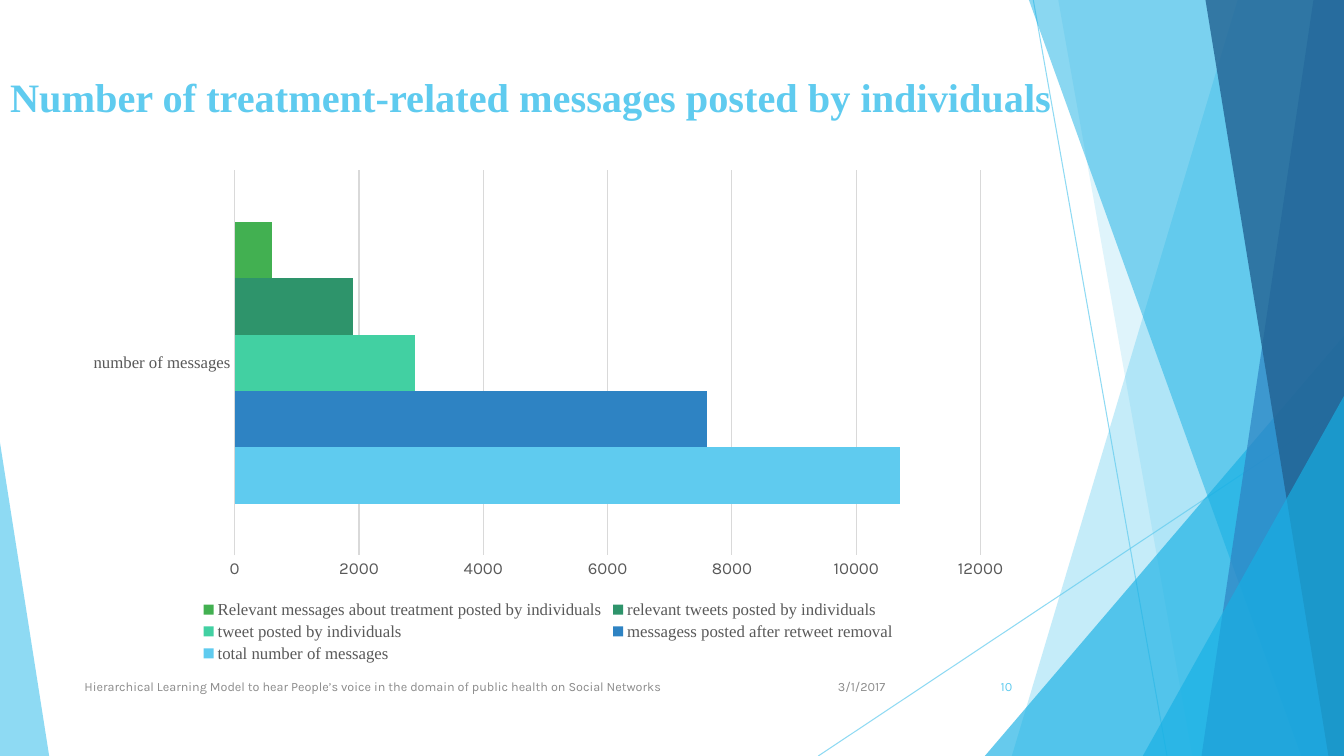
from lxml import etree
from pptx import Presentation
from pptx import util as u
from pptx.chart.data import CategoryChartData
from pptx.dml.color import RGBColor
from pptx.enum import chart as ch, shapes, text
from pptx.oxml.ns import qn

COLORS = {
    "sky": "5FCBEF", "cyan": "17B0E4", "blue": "2E83C3", "navy": "226292",
    "mint": "42D0A2", "teal": "2E946B", "green": "42B051",
    "axis": "595959", "grid": "D9D9D9", "footer": "8C8C8C",
}
SERIF, SANS = "Times New Roman", "Karla"
W, H = 33.87, 19.05

# Facets in stacking order: (kind, top x or apex y, bottom x, colour, opacity %)
FACETS = [
    ("quad", 31.19, 25.5, "sky", 36),
    ("quad", 26.67, 30.05, "sky", 20),
    ("triangle", 8.46, 24.82, "cyan", 66),
    ("quad", 25.93, 32.79, "cyan", 50),
    ("quad", 33.1, 30.28, "blue", 70),
    ("quad", 30.38, 33.48, "navy", 80),
    ("triangle", 9.98, 28.8, "cyan", 66),
]
RAYS = [(26.04, 0, 29.41, H), (W, 10.24, 20.62, H)]
SERIES = [
    ("total number of messages", 10700, "sky"),
    ("messagess posted after retweet removal", 7600, "blue"),
    ("tweet posted by individuals", 2900, "mint"),
    ("relevant tweets posted by individuals", 1900, "teal"),
    ("Relevant messages about treatment posted by individuals", 600, "green"),
]


def rgb(name):
    return RGBColor.from_string(COLORS[name])


def style_font(font, name, size, color, bold=False):
    font.name, font.size, font.bold = name, u.Pt(size), bold
    font.color.rgb = rgb(color)


def set_alpha(fill_owner, percent):
    """Make the solid colour inside a shape's fill or line translucent."""
    color = next(fill_owner.iter(qn("a:srgbClr")))
    etree.SubElement(color, qn("a:alpha")).set("val", str(percent * 1000))


def paint(sp, color, opacity):
    sp.shadow.inherit = False
    sp.fill.solid()
    sp.fill.fore_color.rgb = rgb(color)
    sp.line.fill.background()
    set_alpha(sp.element.spPr, opacity)


def add_triangle(slide, box, apex, color, opacity):
    sp = slide.shapes.add_shape(shapes.MSO_SHAPE.ISOSCELES_TRIANGLE, *map(u.Cm, box))
    sp.adjustments[0] = apex
    paint(sp, color, opacity)


def add_facets(slide, box):
    x, y, w, h = box
    right, bottom = x + w, y + h
    for x1, y1, x2, y2 in RAYS:
        ray = slide.shapes.add_connector(
            shapes.MSO_CONNECTOR.STRAIGHT,
            u.Cm(x + x1), u.Cm(y + y1), u.Cm(x + x2), u.Cm(y + y2))
        ray.line.color.rgb = rgb("sky")
        ray.line.width = u.Pt(0.75)
        spPr = ray.element.spPr
        set_alpha(spPr, 70)
        etree.SubElement(spPr, qn("a:effectLst"))
    for kind, top, foot, color, opacity in FACETS:
        if kind == "triangle":
            add_triangle(slide, (x + foot, y + top, w - foot, h - top), 1, color, opacity)
            continue
        builder = slide.shapes.build_freeform(u.Cm(x + top), u.Cm(y))
        corners = [(right, y), (right, bottom), (x + foot, bottom)]
        builder.add_line_segments([(u.Cm(a), u.Cm(b)) for a, b in corners])
        paint(builder.convert_to_shape(), color, opacity)
    add_triangle(slide, (x, y + 11.15, 1.24, h - 11.15), 0, "sky", 70)


def add_title(slide, box, words):
    title = slide.shapes.title
    slide.shapes.element.append(title.element)  # bring in front of the facets
    title.left, title.top, title.width, title.height = map(u.Cm, box)
    tf = title.text_frame
    tf.word_wrap = True
    tf.auto_size = text.MSO_AUTO_SIZE.NONE
    tf.vertical_anchor = text.MSO_ANCHOR.TOP
    p = tf.paragraphs[0]
    p.alignment = text.PP_ALIGN.LEFT
    r = p.add_run()
    r.text = words
    style_font(r.font, SERIF, 28.8, "sky", bold=True)


def add_message_chart(slide, box):
    data = CategoryChartData()
    data.categories = ["number of messages"]
    for name, value, _ in SERIES:
        data.add_series(name, [value])
    chart = slide.shapes.add_chart(
        ch.XL_CHART_TYPE.BAR_CLUSTERED, *map(u.Cm, box), data).chart
    chart.has_title = False
    style_font(chart.font, SANS, 10, "axis")

    plot = chart.plots[0]
    plot.gap_width, plot.overlap, plot.vary_by_categories = 182, 0, False
    for series, (_, _, color) in zip(plot.series, SERIES):
        series.format.fill.solid()
        series.format.fill.fore_color.rgb = rgb(color)

    for axis, font in ((chart.category_axis, SERIF), (chart.value_axis, SANS)):
        axis.major_tick_mark = axis.minor_tick_mark = ch.XL_TICK_MARK.NONE
        style_font(axis.tick_labels.font, font, 12, "axis")
    chart.category_axis.has_major_gridlines = False
    value_axis = chart.value_axis
    value_axis.minimum_scale, value_axis.maximum_scale = 0, 12000
    value_axis.major_unit = 2000
    value_axis.format.line.fill.background()
    for line in (chart.category_axis.format.line, value_axis.major_gridlines.format.line):
        line.color.rgb = rgb("grid")
        line.width = u.Pt(0.75)

    chart.has_legend = True
    chart.legend.position = ch.XL_LEGEND_POSITION.BOTTOM
    chart.legend.include_in_layout = False
    style_font(chart.legend.font, SERIF, 12, "axis")


def add_footer(slide, box):
    x, y, w, h = box
    left, right = text.PP_ALIGN.LEFT, text.PP_ALIGN.RIGHT
    parts = [
        ("Hierarchical Learning Model to hear People’s voice in the domain of "
         "public health on Social Networks", 0, 17.5, left, "footer"),
        ("3/1/2017", 18.14, 2.54, right, "footer"),
        ("10", w - 1.9, 1.9, right, "sky"),
    ]
    for words, offset, width, align, color in parts:
        sp = slide.shapes.add_textbox(u.Cm(x + offset), u.Cm(y), u.Cm(width), u.Cm(h))
        tf = sp.text_frame
        tf.word_wrap = True
        tf.vertical_anchor = text.MSO_ANCHOR.MIDDLE
        p = tf.paragraphs[0]
        p.alignment = align
        r = p.add_run()
        r.text = words
        style_font(r.font, SANS, 9, color)


def main():
    prs = Presentation()
    prs.slide_width, prs.slide_height = u.Cm(W), u.Cm(H)
    slide = prs.slides.add_slide(prs.slide_layouts[5])
    add_facets(slide, (0, 0, W, H))
    add_title(slide, (0, 1.7, 27.6, 2.03),
              "Number of treatment-related messages posted by individuals")
    add_message_chart(slide, (1.88, 4.04, 23.88, 12.75))
    add_footer(slide, (1.88, 16.79, 23.88, 1.02))
    prs.save("out.pptx")


if __name__ == "__main__":
    main()
